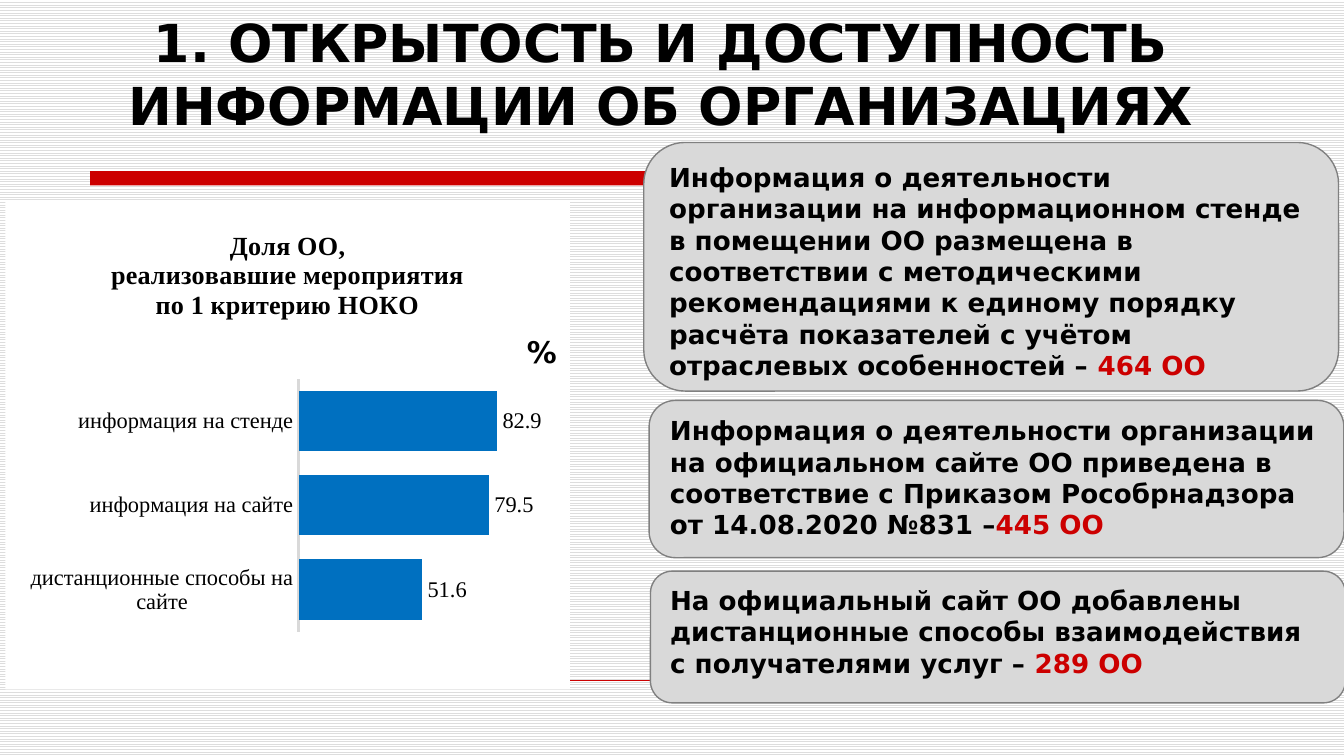
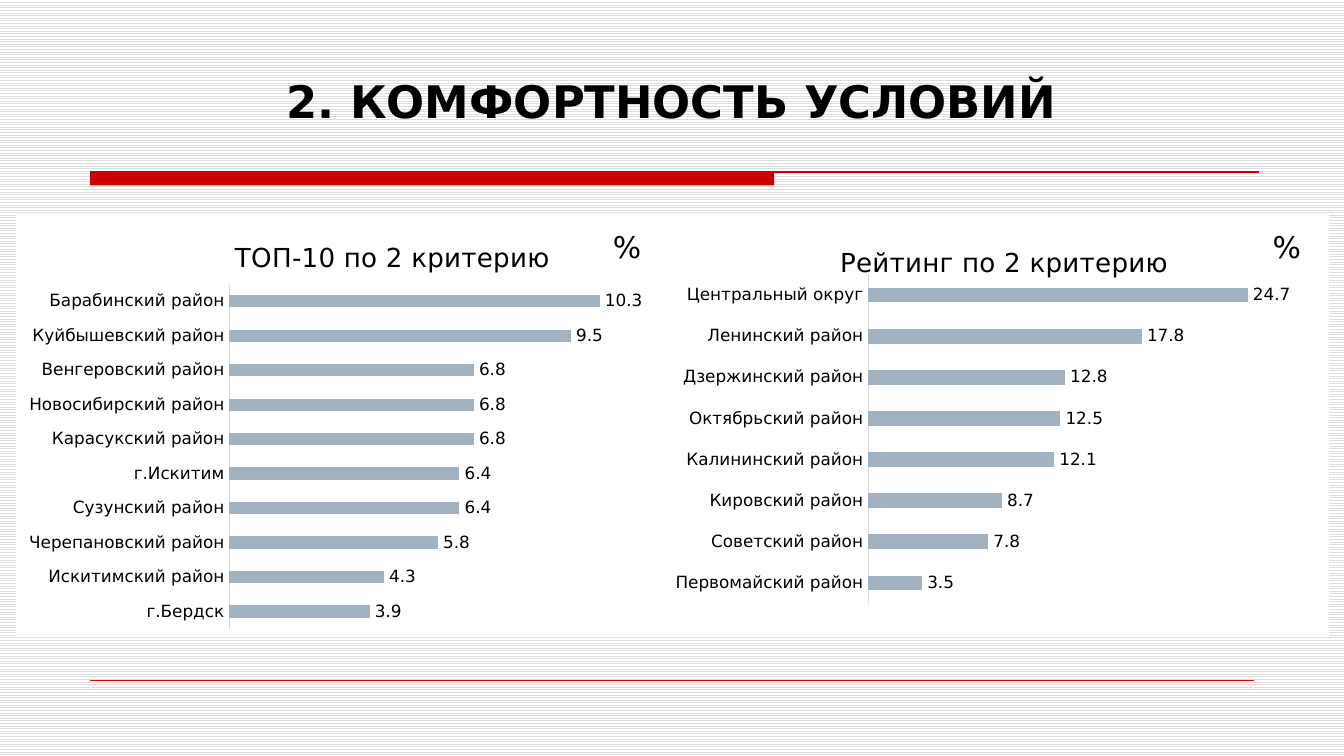
from lxml import etree
from pptx import Presentation
from pptx import util as u
from pptx.chart.data import CategoryChartData
from pptx.dml.color import RGBColor
from pptx.enum import chart as ch, dml, shapes, text
from pptx.oxml import ns

CELL = u.Inches(0.1)
COLS, ROWS = 100, 56.25
BLACK = RGBColor(0, 0, 0)
WHITE = RGBColor(255, 255, 255)
RED = RGBColor(0xCC, 0, 0)
STRIPE = RGBColor(0xDD, 0xDD, 0xDD)
PANEL = RGBColor(0xD9, 0xD9, 0xD9)
EDGE = RGBColor(0x80, 0x80, 0x80)
BLUE = RGBColor(0, 0x70, 0xC0)
STEEL = RGBColor(0xA3, 0xB2, 0xC1)
SANS, SERIF = "DejaVu Sans", "Times New Roman"
MID, TOP = text.MSO_ANCHOR.MIDDLE, text.MSO_ANCHOR.TOP

CARDS = [
    (47.9, 10.6, 18.5, "Информация о деятельности организации на информационном стенде "
     "в помещении ОО размещена в соответствии с методическими рекомендациями к единому "
     "порядку расчёта показателей с учётом отраслевых особенностей – ", "464 ОО"),
    (48.3, 29.8, 11.7, "Информация о деятельности организации на официальном сайте ОО "
     "приведена в соответствие с Приказом Рособрнадзора от 14.08.2020 №831 –", "445 ОО"),
    (48.4, 42.5, 9.8, "На официальный сайт ОО добавлены дистанционные способы "
     "взаимодействия с получателями услуг – ", "289 ОО"),
]
SHARE = {"дистанционные способы на сайте": 51.6, "информация на сайте": 79.5,
         "информация на стенде": 82.9}
RATING = {"Центральный округ": 24.7, "Ленинский район": 17.8, "Дзержинский район": 12.8,
          "Октябрьский район": 12.5, "Калининский район": 12.1, "Кировский район": 8.7,
          "Советский район": 7.8, "Первомайский район": 3.5}
LEADERS = {"Барабинский район": 10.3, "Куйбышевский район": 9.5, "Венгеровский район": 6.8,
           "Новосибирский район": 6.8, "Карасукский район": 6.8, "г.Искитим": 6.4,
           "Сузунский район": 6.4, "Черепановский район": 5.8, "Искитимский район": 4.3,
           "г.Бердск": 3.9}


def grid(*cells):
    """Turn grid cells into lengths."""
    return [u.Emu(round(c * CELL)) for c in cells]


def style(font, size, face=SANS, color=BLACK, bold=False):
    """Format a font."""
    font.size, font.name, font.bold = u.Pt(size), face, bold
    font.color.rgb = color


def write(frame, *runs, size, bold=False, align=None, anchor=TOP, pad=None):
    """Fill a text frame with (words, colour) runs."""
    frame.word_wrap, frame.vertical_anchor = True, anchor
    frame.auto_size = text.MSO_AUTO_SIZE.NONE
    if pad is not None:
        frame.margin_left = frame.margin_right = pad
    para = frame.paragraphs[0]
    para.alignment = align or text.PP_ALIGN.LEFT
    for words, color in runs:
        run = para.add_run()
        run.text = words
        style(run.font, size, color=color, bold=bold)


def panel(slide, kind, area, fill, edge=None):
    """Add a flat filled shape."""
    shape = slide.shapes.add_shape(kind, *grid(*area))
    shape.shadow.inherit = False
    shape.fill.solid()
    shape.fill.fore_color.rgb = fill
    if edge is None:
        shape.line.fill.background()
    else:
        shape.line.color.rgb, shape.line.width = edge, u.Pt(0.75)
    return shape


def rule(slide, left, right, y, width):
    """Add a level red line."""
    line = slide.shapes.add_connector(shapes.MSO_CONNECTOR.STRAIGHT, *grid(left, y, right, y))
    line.line.color.rgb, line.line.width = RED, u.Pt(width)
    etree.SubElement(line.element.spPr, ns.qn("a:effectLst"))
    return line


def dress(prs, slide):
    """Give the master its striped ground, band and rules."""
    master = prs.slide_master
    fill = master.background.fill
    fill.patterned()
    fill.pattern = dml.MSO_PATTERN.LIGHT_HORIZONTAL
    fill.fore_color.rgb, fill.back_color.rgb = STRIPE, WHITE
    parts = [panel(slide, shapes.MSO_SHAPE.RECTANGLE, (6.7, 12.8, 50.9, 1), RED),
             rule(slide, 6.7, 93.7, 12.8, 0.75), rule(slide, 6.7, 93.3, 50.6, 0.25)]
    for spot, part in enumerate(parts, 2):
        master.shapes.element.insert(spot, part.element)


def head(slide, words, area, size):
    """Place and fill the title."""
    title = slide.shapes.title
    title.left, title.top, title.width, title.height = grid(*area)
    write(title.text_frame, (words, BLACK), size=size, bold=True,
          align=text.PP_ALIGN.CENTER, anchor=text.MSO_ANCHOR.BOTTOM)


def sign(slide, area, fill=None):
    """Add a percent sign, on a filled box if asked."""
    if fill is None:
        box = slide.shapes.add_textbox(*grid(*area))
    else:
        box = panel(slide, shapes.MSO_SHAPE.RECTANGLE, area, fill)
    write(box.text_frame, ("%", BLACK), size=16, bold=fill is not None,
          align=text.PP_ALIGN.CENTER, anchor=MID, pad=0)


def pin(node, spot, **shares):
    """Set a manual layout on a chart part."""
    for old in node.findall(ns.qn("c:layout")):
        node.remove(old)
    layout = etree.Element(ns.qn("c:layout"))
    node.insert(spot, layout)
    manual = etree.SubElement(layout, ns.qn("c:manualLayout"))
    if "w" in shares:
        etree.SubElement(manual, ns.qn("c:layoutTarget")).set("val", "inner")
    for key in ("x", "y"):
        etree.SubElement(manual, ns.qn(f"c:{key}Mode")).set("val", "edge")
    for key, share in shares.items():
        etree.SubElement(manual, ns.qn(f"c:{key}")).set("val", str(share))


def paint(chart):
    """Make the chart area plain white."""
    area = etree.Element(ns.qn("c:spPr"))
    solid = etree.SubElement(area, ns.qn("a:solidFill"))
    etree.SubElement(solid, ns.qn("a:srgbClr")).set("val", str(WHITE))
    line = etree.SubElement(area, ns.qn("a:ln"))
    etree.SubElement(line, ns.qn("a:noFill"))
    chart.element.find(ns.qn("c:chart")).addnext(area)


def bars(slide, area, data, title, spot, plot, top, color=STEEL, face=SANS,
         size=9, gap=182, lap=0, bold=False, flip=True, width=0.75):
    """Add a bar chart with value labels."""
    feed = CategoryChartData(number_format="0.0")
    feed.categories = list(data)
    feed.add_series("Series 1", list(data.values()))
    chart = slide.shapes.add_chart(ch.XL_CHART_TYPE.BAR_CLUSTERED, *grid(*area), feed).chart
    style(chart.font, size, face)
    paint(chart)
    chart.has_legend = False
    chart.has_title = True
    chart.chart_title.include_in_layout = False
    frame = chart.chart_title.text_frame
    frame.text = title
    for para in frame.paragraphs:
        style(para.runs[0].font, 14, face, bold=bold)
    pin(chart.chart_title.element, 1, **dict(zip("xy", spot)))
    pin(chart.element.find(".//" + ns.qn("c:plotArea")), 0, **dict(zip("xywh", plot)))

    cat, val = chart.category_axis, chart.value_axis
    cat.major_tick_mark = cat.minor_tick_mark = ch.XL_TICK_MARK.NONE
    cat.has_major_gridlines = val.has_major_gridlines = False
    cat.reverse_order = flip
    cat.format.line.color.rgb, cat.format.line.width = PANEL, u.Pt(width)
    style(cat.tick_labels.font, size, face)
    val.minimum_scale, val.maximum_scale = 0, top
    val.visible = False

    group = chart.plots[0]
    group.gap_width, group.overlap, group.vary_by_categories = gap, lap, False
    fill = group.series[0].format.fill
    fill.solid()
    fill.fore_color.rgb = color
    group.has_data_labels = True
    tags = group.data_labels
    tags.show_value, tags.position = True, ch.XL_LABEL_POSITION.OUTSIDE_END
    tags.number_format, tags.number_format_is_linked = "0.0", False
    style(tags.font, size, face)


def access(slide):
    """Fill the slide on open information."""
    head(slide, "1. ОТКРЫТОСТЬ И ДОСТУПНОСТЬ ИНФОРМАЦИИ ОБ ОРГАНИЗАЦИЯХ",
         (0, 0, 98.3, 10.6), 28)
    for left, top, high, words, count in CARDS:
        card = panel(slide, shapes.MSO_SHAPE.ROUNDED_RECTANGLE,
                     (left, top, 51.7, high), PANEL, EDGE)
        write(card.text_frame, (words, BLACK), (count, RED), size=14, bold=True)
    bars(slide, (0.4, 14.9, 42, 36.4), SHARE,
         "Доля ОО,\nреализовавшие мероприятия\nпо 1 критерию НОКО",
         (0.18, 0.05), (0.52, 0.365, 0.424, 0.517), 100, color=BLUE, face=SERIF,
         size=12, gap=40, lap=-100, bold=True, flip=False, width=1.5)
    sign(slide, (38.2, 24.2, 4.2, 3.9), WHITE)


def comfort(slide):
    """Fill the slide on comfort."""
    head(slide, "2. КОМФОРТНОСТЬ УСЛОВИЙ", (6.2, 3.1, 87.5, 6.9), 24)
    for left, mark, data, title, spot, plot, top in (
            (49.9, 94.1, RATING, "Рейтинг по 2 критерию",
             (0.25, 0.06), (0.3, 0.144, 0.7, 0.777), 30),
            (1.2, 45, LEADERS, "ТОП-10 по 2 критерию",
             (0.325, 0.05), (0.324, 0.166, 0.655, 0.815), 12)):
        bars(slide, (left, 15.9, 49, 31.5), data, title, spot, plot, top)
        sign(slide, (mark, 16.5, 3.3, 3.7))


def main():
    """Build and save both slides."""
    prs = Presentation()
    prs.slide_width, prs.slide_height = grid(COLS, ROWS)
    for spot, fill in enumerate((access, comfort)):
        slide = prs.slides.add_slide(prs.slide_layouts[5])
        if spot == 0:
            dress(prs, slide)
        fill(slide)
    prs.save("out.pptx")


if __name__ == "__main__":
    main()
